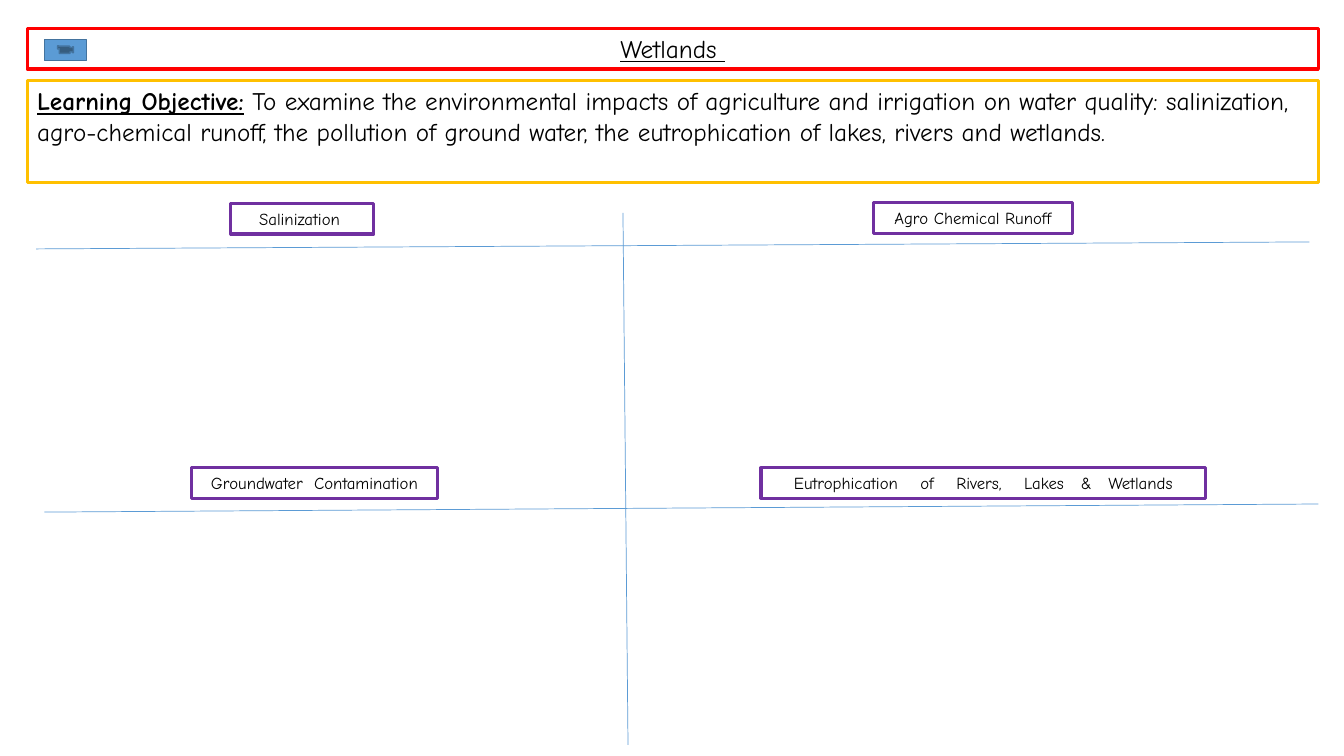
from dataclasses import dataclass

from lxml.etree import SubElement
from pptx import Presentation
from pptx.dml.color import RGBColor
from pptx.enum.shapes import MSO_CONNECTOR, MSO_SHAPE
from pptx.enum.text import PP_ALIGN
from pptx.oxml.ns import qn
from pptx.util import Pt

COLORS = {
    "text": "000000",
    "title": "FF0000",
    "objective": "FFC000",
    "topic": "7030A0",
    "divider": "5B9BD5",
    "button": "5B9BD5",
    "button edge": "43739E",
}
FONT = "Comic Neue"


@dataclass(frozen=True)
class Topic:
    text: str
    left: float
    top: float
    width: float
    gaps: tuple[float, ...] = ()  # extra points added to each space in turn


@dataclass(frozen=True)
class Divider:
    start: tuple[float, float]
    end: tuple[float, float]


TOPICS = [
    Topic("Salinization ", 164.9, 145.4, 102.2),
    Topic("Agro Chemical Runoff", 623.9, 144.7, 142),
    Topic("Groundwater Contamination", 136.8, 334.1, 175.7, (4,)),
    Topic("Eutrophication of Rivers, Lakes & Wetlands", 543.6, 334.1, 317.5,
          (12, 12, 12, 8, 8)),
]
DIVIDERS = [
    Divider((445, 152), (448.6, 532)),
    Divider((935.3, 172.8), (25.9, 177.8)),
    Divider((941.8, 360), (31.7, 365.8)),
]


def color(name: str) -> RGBColor:
    return RGBColor.from_string(COLORS[name])


def add_text(paragraph, text: str, *, size: float = 18, bold: bool = False,
             underline: bool = False, spacing: float = 0) -> None:
    run = paragraph.add_run()
    run.text = text
    font = run.font
    font.name, font.size = FONT, Pt(size)
    font.bold, font.underline = bold, underline
    font.color.rgb = color("text")
    if spacing:
        run._r.get_or_add_rPr().set("spc", str(round(spacing * 100)))


def add_frame(slide, left: float, top: float, width: float, height: float,
              edge: str, align: PP_ALIGN = PP_ALIGN.CENTER):
    """Draw an outlined text box and return its paragraph."""
    frame = slide.shapes.add_textbox(Pt(left), Pt(top), Pt(width), Pt(height))
    frame.line.color.rgb = color(edge)
    frame.line.width = Pt(2.25)
    frame.text_frame.word_wrap = True
    paragraph = frame.text_frame.paragraphs[0]
    paragraph.alignment = align
    return paragraph


def add_topic(slide, topic: Topic) -> None:
    paragraph = add_frame(slide, topic.left, topic.top, topic.width, 21.8, "topic")
    if not topic.gaps:
        add_text(paragraph, topic.text, size=12)
        return
    first, *others = topic.text.split(" ")
    add_text(paragraph, first, size=12)
    for gap, word in zip(topic.gaps, others):
        add_text(paragraph, " ", size=12, spacing=gap)
        add_text(paragraph, word, size=12)


def add_divider(slide, divider: Divider) -> None:
    line = slide.shapes.add_connector(
        MSO_CONNECTOR.STRAIGHT, *map(Pt, divider.start + divider.end))
    line.line.color.rgb = color("divider")
    line.line.width = Pt(0.5)
    SubElement(line._element.spPr, qn("a:effectLst"))


def main() -> None:
    deck = Presentation()
    deck.slide_width, deck.slide_height = Pt(960), Pt(540)
    slide = deck.slides.add_slide(deck.slide_layouts[6])

    # Title and learning objective
    title = add_frame(slide, 19.4, 20.2, 922.3, 29.1, "title")
    add_text(title, "Wetlands ", underline=True)
    objective = add_frame(slide, 19.4, 57.6, 922.3, 72.7, "objective", PP_ALIGN.LEFT)
    add_text(objective, "Learning Objective:", bold=True, underline=True)
    add_text(objective, " To examine the environmental impacts of agriculture and "
             "irrigation on water quality: salinization, agro-chemical runoff, "
             "the pollution of ground water, the eutrophication of lakes, "
             "rivers and wetlands.")

    # Movie button in the title bar
    movie = slide.shapes.add_shape(
        MSO_SHAPE.ACTION_BUTTON_MOVIE, Pt(31.7), Pt(28.1), Pt(30.2), Pt(15.1))
    movie.shadow.inherit = False
    movie.fill.solid()
    movie.fill.fore_color.rgb = color("button")
    movie.line.color.rgb = color("button edge")
    movie.line.width = Pt(1)

    # Four note areas
    for topic in TOPICS:
        add_topic(slide, topic)
    for divider in DIVIDERS:
        add_divider(slide, divider)

    deck.save("out.pptx")


if __name__ == "__main__":
    main()
